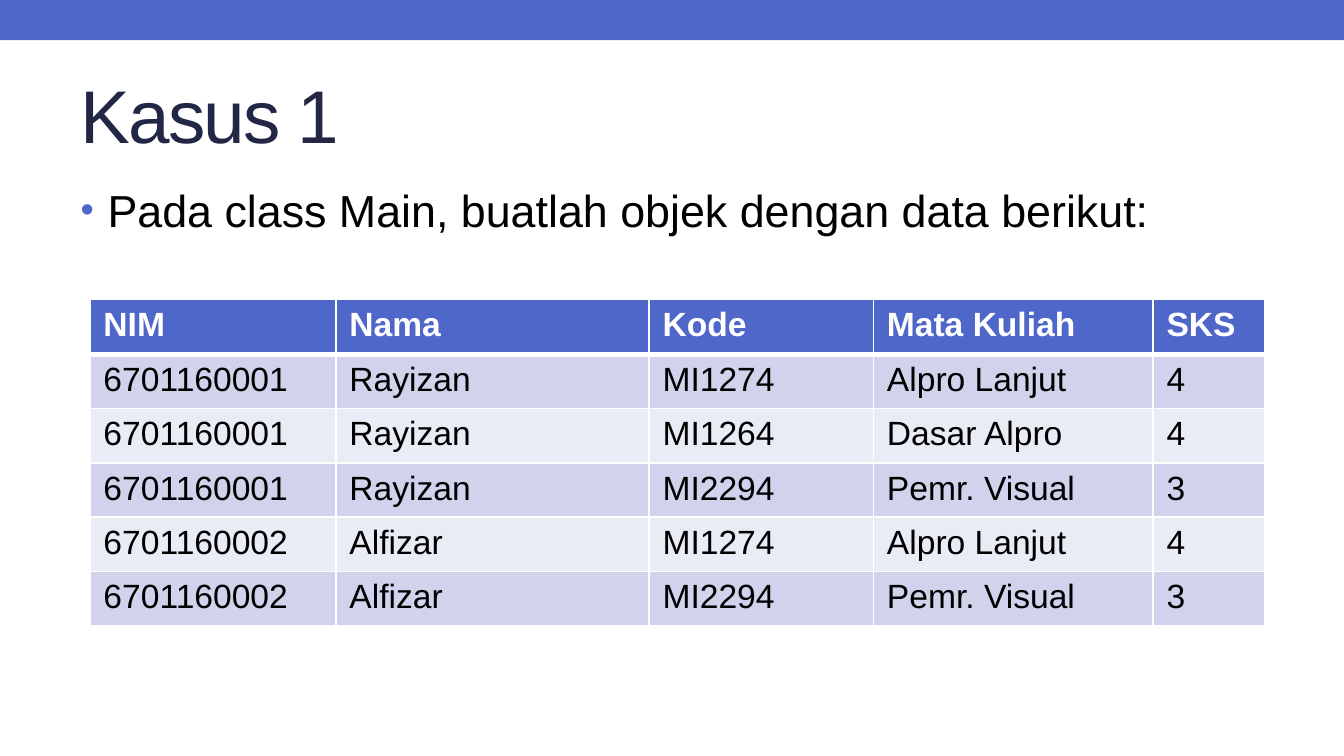
from lxml.etree import SubElement
from pptx import Presentation
from pptx.dml.color import RGBColor
from pptx.enum.shapes import MSO_SHAPE
from pptx.enum.text import MSO_ANCHOR, PP_ALIGN
from pptx.oxml.ns import qn
from pptx.util import Inches, Pt

COLORS = {
    "accent": "4E67C8",
    "title": "212745",
    "text": "000000",
    "white": "FFFFFF",
    "band_dark": "D0D3EB",
    "band_light": "E9EBF5",
}
TITLE = "Kasus 1"
INSTRUCTION = "Pada class Main, buatlah objek dengan data berikut:"
HEADER = ("NIM", "Nama", "Kode", "Mata Kuliah", "SKS")
COURSES = [
    ("6701160001", "Rayizan", "MI1274", "Alpro Lanjut", "4"),
    ("6701160001", "Rayizan", "MI1264", "Dasar Alpro", "4"),
    ("6701160001", "Rayizan", "MI2294", "Pemr. Visual", "3"),
    ("6701160002", "Alfizar", "MI1274", "Alpro Lanjut", "4"),
    ("6701160002", "Alfizar", "MI2294", "Pemr. Visual", "3"),
]
COLUMN_WIDTHS = (1.83, 2.33, 1.67, 2.08, 0.83)
TABLE_HEIGHT = 2.43


def color(name):
    return RGBColor.from_string(COLORS[name])


def write(frame, text, size=18, ink="text", bold=False, spacing=None):
    para = frame.paragraphs[0]
    para.alignment = PP_ALIGN.LEFT
    span = para.add_run()
    span.text = text
    span.font.name = "Arial"
    span.font.size = Pt(size)
    span.font.bold = bold
    span.font.color.rgb = color(ink)
    if spacing is not None:
        span.font._element.set("spc", str(spacing * 100))
    return para


def place(shape, left, top, width, height):
    shape.left, shape.top = Inches(left), Inches(top)
    shape.width, shape.height = Inches(width), Inches(height)


def add_bullet(para, indent):
    properties = para._p.get_or_add_pPr()
    properties.set("marL", str(Inches(indent)))
    properties.set("indent", str(Inches(-indent)))
    bullet_color = SubElement(properties, qn("a:buClr"))
    SubElement(bullet_color, qn("a:srgbClr"), val=COLORS["accent"])
    SubElement(properties, qn("a:buSzPct"), val="85000")
    SubElement(properties, qn("a:buFont"), typeface="Arial")
    SubElement(properties, qn("a:buChar"), char="•")


def add_borders(cell, top, bottom):
    properties = cell._tc.get_or_add_tcPr()
    for side, width in (("lnL", 1), ("lnR", 1), ("lnT", top), ("lnB", bottom)):
        line = SubElement(properties, qn(f"a:{side}"), w=str(Pt(width)))
        fill = SubElement(line, qn("a:solidFill"))
        SubElement(fill, qn("a:srgbClr"), val=COLORS["white"])


def add_course_table(page):
    rows = [HEADER, *COURSES]
    table = page.shapes.add_table(
        len(rows), len(HEADER), Inches(0.67), Inches(2.23),
        Inches(sum(COLUMN_WIDTHS)), Inches(TABLE_HEIGHT),
    ).table
    for column, width in zip(table.columns, COLUMN_WIDTHS):
        column.width = Inches(width)
    for index, values in enumerate(rows):
        is_header = index == 0
        band = "band_dark" if index % 2 else "band_light"
        for cell, value in zip(table.rows[index].cells, values):
            add_borders(cell, top=3 if index == 1 else 1, bottom=3 if is_header else 1)
            cell.fill.solid()
            cell.fill.fore_color.rgb = color("accent" if is_header else band)
            write(cell.text_frame, value, bold=is_header,
                  ink="white" if is_header else "text")


def main():
    deck = Presentation()
    deck.slide_width = Inches(10)
    deck.slide_height = deck.slide_width * 9 // 16
    page = deck.slides.add_slide(deck.slide_layouts[1])

    bar = page.shapes.add_shape(MSO_SHAPE.RECTANGLE, 0, 0, deck.slide_width, Inches(0.3))
    bar.shadow.inherit = False
    bar.fill.solid()
    bar.fill.fore_color.rgb = color("accent")
    bar.line.fill.background()

    title = page.shapes.title
    place(title, 0.5, 0.44, 9, 0.81)
    title.text_frame.vertical_anchor = MSO_ANCHOR.MIDDLE
    write(title.text_frame, TITLE, size=40, ink="title", spacing=-1)

    body = page.placeholders[1]
    place(body, 0.5, 1.31, 9, 4)
    para = write(body.text_frame, INSTRUCTION, size=24)
    para.space_before = Pt(4.8)
    add_bullet(para, 0.2)

    add_course_table(page)
    deck.save("out.pptx")


if __name__ == "__main__":
    main()
